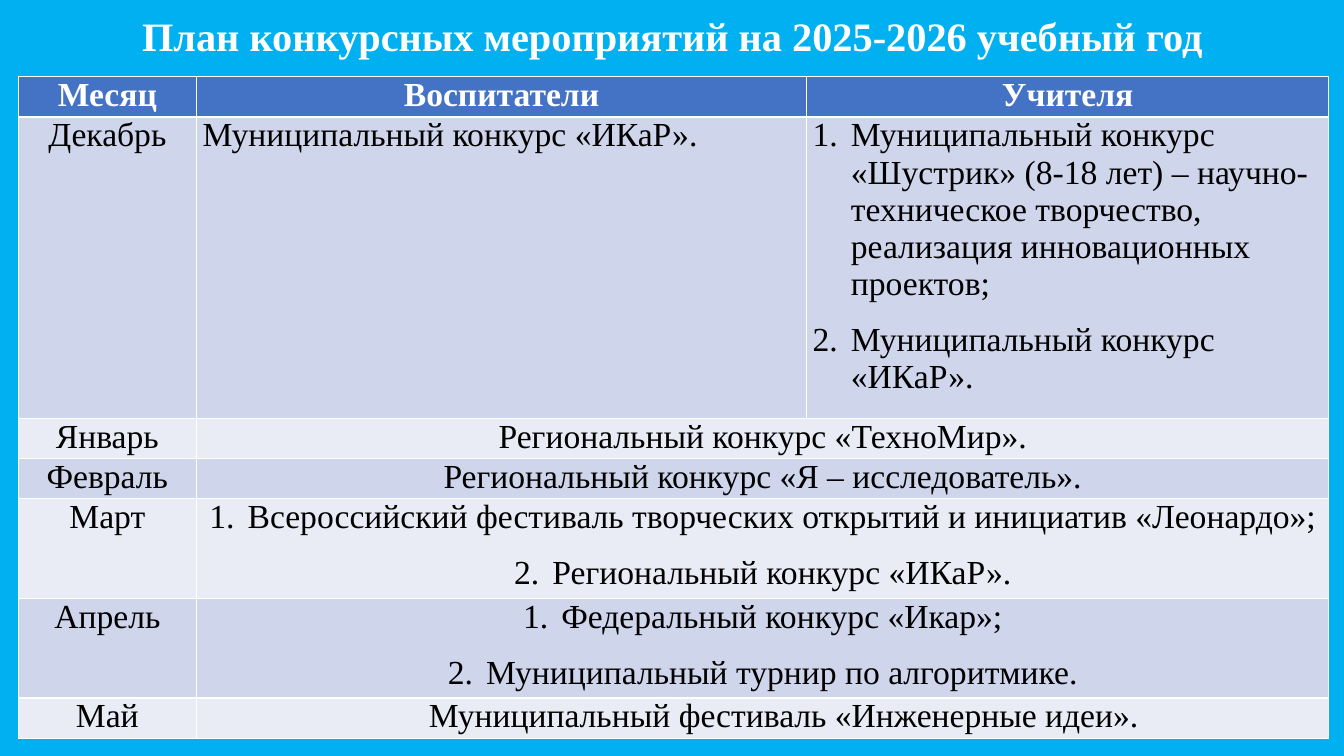
from lxml import etree
from pptx import Presentation
from pptx.dml.color import RGBColor
from pptx.enum import text
from pptx.oxml import ns
from pptx.util import Inches, Pt

SKY = RGBColor(0x00, 0xB0, 0xF0)
BLUE = RGBColor(0x44, 0x72, 0xC4)
BAND_DARK = RGBColor(0xCF, 0xD5, 0xEA)
BAND_LIGHT = RGBColor(0xE9, 0xEB, 0xF5)
WHITE = RGBColor(0xFF, 0xFF, 0xFF)
BLACK = RGBColor(0x00, 0x00, 0x00)
FONT = "Times New Roman"
LEFT, CENTER = text.PP_ALIGN.LEFT, text.PP_ALIGN.CENTER

COLUMN_WIDTHS = [1.77, 6.05, 5.18]
ROW_HEIGHTS = [0.39, 2.86, 0.39, 0.39, 0.98, 0.98, 0.39]
# Each cell is a list of paragraphs; several paragraphs make a numbered list.
# A row with two cells joins the columns of both groups of staff.
PLAN = [
    [["Месяц"], ["Воспитатели"], ["Учителя"]],
    [["Декабрь"], ["Муниципальный конкурс «ИКаР»."],
     ["Муниципальный конкурс «Шустрик» (8-18 лет) – научно-техническое "
      "творчество, реализация инновационных проектов;",
      "Муниципальный конкурс «ИКаР»."]],
    [["Январь"], ["Региональный конкурс «ТехноМир»."]],
    [["Февраль"], ["Региональный конкурс «Я – исследователь»."]],
    [["Март"],
     ["Всероссийский фестиваль творческих открытий и инициатив «Леонардо»;",
      "Региональный конкурс «ИКаР»."]],
    [["Апрель"],
     ["Федеральный конкурс «Икар»;", "Муниципальный турнир по алгоритмике."]],
    [["Май"], ["Муниципальный фестиваль «Инженерные идеи». "]],
]


def style_paragraph(paragraph, size, color, bold, alignment):
    paragraph.alignment = alignment
    font = paragraph.font
    font.name, font.size, font.bold = FONT, Pt(size), bold
    font.color.rgb = color


def set_indent(paragraph, margin, first_line=0, numbered=False):
    properties = paragraph._p.get_or_add_pPr()
    properties.set("marL", str(Inches(margin)))
    properties.set("indent", str(Inches(first_line)))
    if numbered:
        number = etree.Element(ns.qn("a:buAutoNum"), type="arabicPeriod")
        properties.find(ns.qn("a:defRPr")).addprevious(number)


presentation = Presentation()
presentation.slide_width = Inches(13.33)
presentation.slide_height = Inches(7.5)
slide = presentation.slides.add_slide(presentation.slide_layouts[6])
slide.background.fill.solid()
slide.background.fill.fore_color.rgb = SKY

title = slide.shapes.add_textbox(Inches(0.92), 0, Inches(11.5), Inches(0.76))
title.text_frame.word_wrap = True
title.text_frame.vertical_anchor = text.MSO_ANCHOR.MIDDLE
heading = title.text_frame.paragraphs[0]
heading.text = "План конкурсных мероприятий на 2025-2026 учебный год"
heading.line_spacing = 0.9
style_paragraph(heading, 28.8, WHITE, True, CENTER)

table = slide.shapes.add_table(
    len(PLAN), len(COLUMN_WIDTHS), Inches(0.18), Inches(0.76),
    Inches(sum(COLUMN_WIDTHS)), Inches(sum(ROW_HEIGHTS))).table
for column, width in zip(table.columns, COLUMN_WIDTHS):
    column.width = Inches(width)

for row_index, (entries, height) in enumerate(zip(PLAN, ROW_HEIGHTS)):
    table.rows[row_index].height = Inches(height)
    is_header = row_index == 0
    is_joined = len(entries) == 2
    if is_joined:
        table.cell(row_index, 1).merge(table.cell(row_index, 2))
    band = BAND_DARK if row_index % 2 else BAND_LIGHT
    for column_index, lines in enumerate(entries):
        cell = table.cell(row_index, column_index)
        cell.fill.solid()
        cell.fill.fore_color.rgb = BLUE if is_header else band
        cell.margin_left = cell.margin_right = Inches(0.06)
        cell.margin_top = cell.margin_bottom = 0
        cell.text = "\n".join(lines)
        centered = is_header or is_joined or column_index == 0
        for paragraph in cell.text_frame.paragraphs:
            paragraph.space_after = Pt(13.5)
            style_paragraph(paragraph, 24, WHITE if is_header else BLACK,
                            is_header, CENTER if centered else LEFT)
            if len(lines) > 1:
                set_indent(paragraph, 0.38, -0.38, numbered=True)

may_event = table.cell(len(PLAN) - 1, 1).text_frame.paragraphs[0]
may_event.space_after = Pt(0)
set_indent(may_event, 0.5)

presentation.save("out.pptx")
